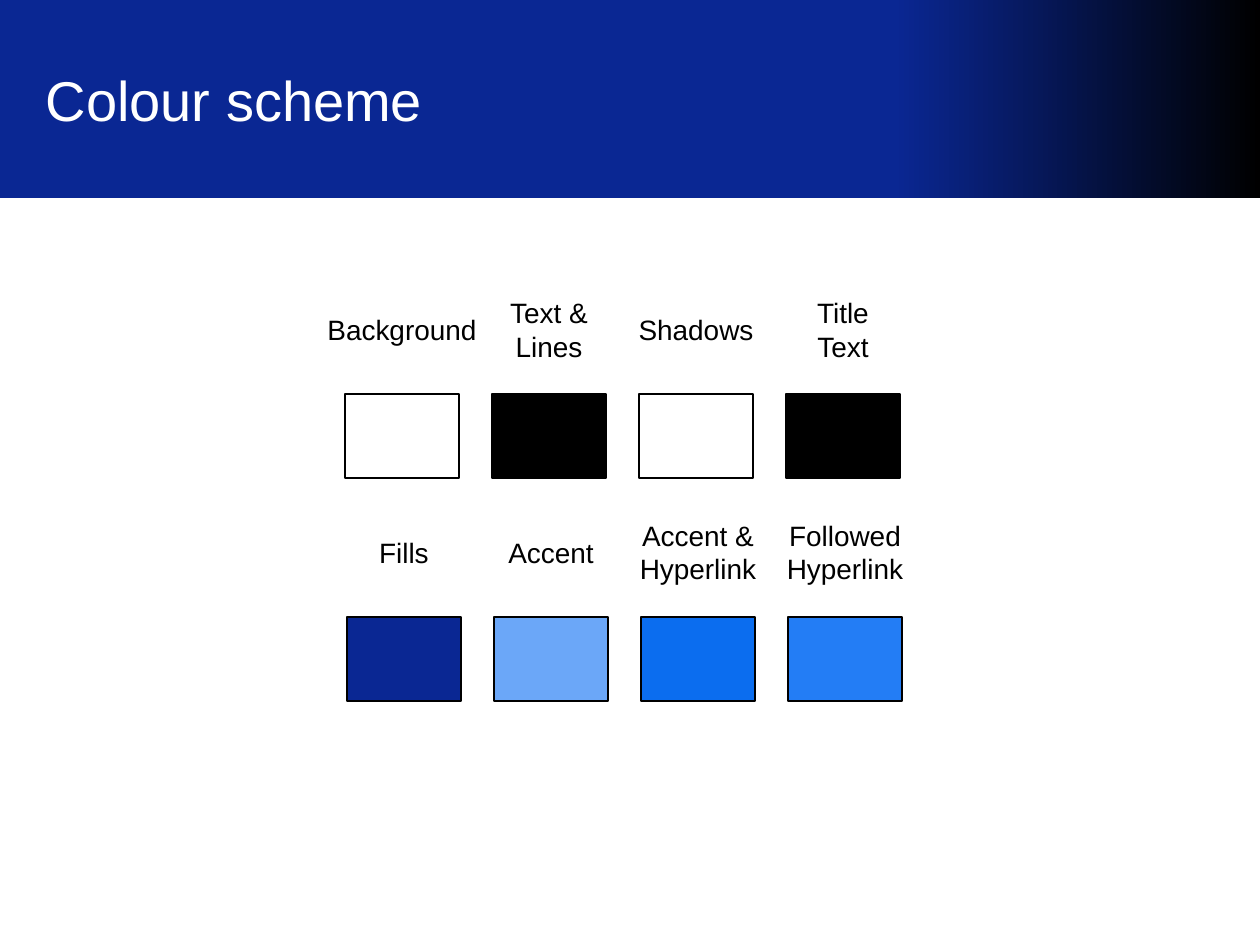
import pptx
import pptx.util
import pptx.dml.color
import pptx.enum.shapes
import pptx.enum.text
from dataclasses import dataclass

TITLE = "Colour scheme"
SWATCH_ROWS = [
    {"left": 345, "top": 394, "swatches": [
        ("Background", 176, "FFFFFF"), ("Text &\nLines", 106, "000000"),
        ("Shadows", 142, "FFFFFF"), ("Title\vText", 80, "000000")]},
    {"left": 347, "top": 617, "swatches": [
        ("Fills", 76, "0A2793"), ("Accent", 112, "6BA7F8"),
        ("Accent &\nHyperlink", 144, "0B6DEF"), ("Followed\nHyperlink", 144, "237DF5")]},
]


@dataclass(frozen=True)
class Theme:
    font: str = "Arial"
    title_size: int = 32
    label_size: int = 16
    line_width: float = 0.75
    title_colour: str = "FFFFFF"
    text_colour: str = "000000"
    line_colour: str = "000000"
    band_stops: tuple = ((0.71, "0A2793"), (1, "000000"))


THEME = Theme()
EMU_PER_PX = 914400 / 126
SLIDE_WIDTH, SLIDE_HEIGHT, BAND_HEIGHT = 1260, 945, 198
SWATCH_WIDTH, SWATCH_HEIGHT, COLUMN_PITCH = 114, 84, 147
LABEL_RISE, LABEL_PADDING, LINE_HEIGHT = 65, 13, 34
RECTANGLE = pptx.enum.shapes.MSO_SHAPE.RECTANGLE
ALIGN = pptx.enum.text.PP_ALIGN


def px(value):
    return pptx.util.Emu(round(value * EMU_PER_PX))


def rgb(value):
    return pptx.dml.color.RGBColor.from_string(value)


def format_text(text_frame, size, colour, alignment):
    text_frame.vertical_anchor = pptx.enum.text.MSO_ANCHOR.MIDDLE
    for paragraph in text_frame.paragraphs:
        paragraph.alignment = alignment
        for run in paragraph.runs:
            run.font.name = THEME.font
            run.font.size = pptx.util.Pt(size)
            run.font.color.rgb = rgb(colour)


def add_rectangle(slide, left, top, width, height):
    shape = slide.shapes.add_shape(RECTANGLE, px(left), px(top), px(width), px(height))
    shape.shadow.inherit = False
    return shape


def add_header(slide):
    band = add_rectangle(slide, 0, 0, SLIDE_WIDTH, BAND_HEIGHT)
    band.fill.gradient()
    band.fill.gradient_angle = 0
    for stop, (position, colour) in zip(band.fill.gradient_stops, THEME.band_stops):
        stop.position = position
        stop.color.rgb = rgb(colour)
    band.line.fill.background()
    title = slide.shapes.title
    title.left, title.top, title.width, title.height = px(33), px(20), px(893), px(158)
    title.text_frame.text = TITLE
    format_text(title.text_frame, THEME.title_size, THEME.title_colour, ALIGN.LEFT)
    title.element.addprevious(band.element)


def add_swatch(slide, left, top, colour):
    swatch = add_rectangle(slide, left, top, SWATCH_WIDTH, SWATCH_HEIGHT)
    swatch.fill.solid()
    swatch.fill.fore_color.rgb = rgb(colour)
    swatch.line.color.rgb = rgb(THEME.line_colour)
    swatch.line.width = pptx.util.Pt(THEME.line_width)


def add_label(slide, centre, middle, label, width):
    height = LABEL_PADDING + LINE_HEIGHT * len(label.splitlines())
    box = slide.shapes.add_textbox(
        px(centre - width / 2), px(middle - height / 2), px(width), px(height))
    box.text_frame.word_wrap = False
    box.text_frame.auto_size = pptx.enum.text.MSO_AUTO_SIZE.SHAPE_TO_FIT_TEXT
    box.text_frame.text = label
    format_text(box.text_frame, THEME.label_size, THEME.text_colour, ALIGN.CENTER)


def main():
    presentation = pptx.Presentation()
    presentation.slide_width = px(SLIDE_WIDTH)
    presentation.slide_height = px(SLIDE_HEIGHT)
    slide = presentation.slides.add_slide(presentation.slide_layouts[5])
    add_header(slide)
    for row in SWATCH_ROWS:
        for column, (label, label_width, colour) in enumerate(row["swatches"]):
            left = row["left"] + column * COLUMN_PITCH
            add_swatch(slide, left, row["top"], colour)
            add_label(slide, left + SWATCH_WIDTH / 2, row["top"] - LABEL_RISE,
                      label, label_width)
    presentation.save("out.pptx")


if __name__ == "__main__":
    main()
